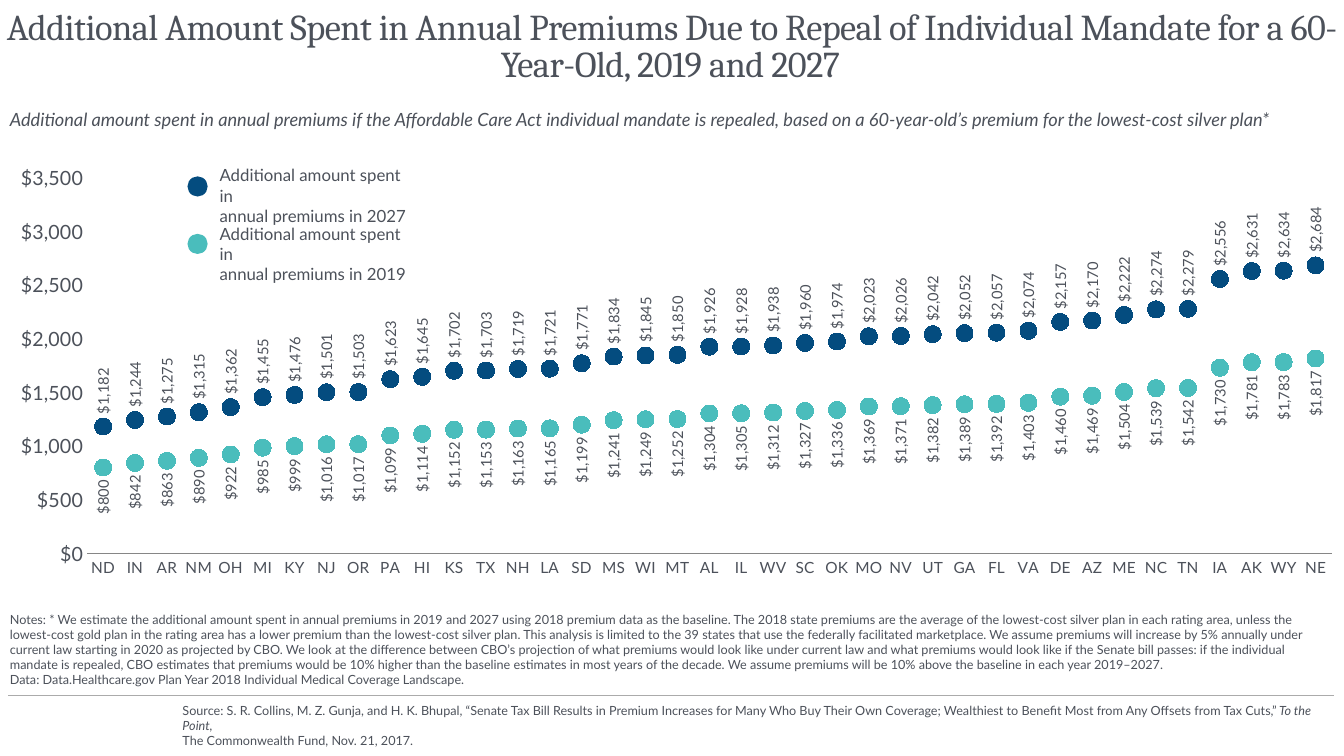
from lxml import etree
from pptx import Presentation
from pptx.chart.data import CategoryChartData
from pptx.dml.color import RGBColor
from pptx.enum.chart import XL_CHART_TYPE, XL_LABEL_POSITION, XL_MARKER_STYLE, XL_TICK_MARK
from pptx.enum.shapes import MSO_CONNECTOR, MSO_SHAPE
from pptx.enum.text import MSO_ANCHOR, MSO_AUTO_SIZE, PP_ALIGN
from pptx.oxml import parse_xml
from pptx.oxml.ns import nsdecls, qn
from pptx.util import Inches, Pt

INK = RGBColor(0x4C, 0x51, 0x5A)
NAVY = RGBColor(0x04, 0x4C, 0x7F)
TEAL = RGBColor(0x4A, 0xBD, 0xBC)
RULE = RGBColor(0xAB, 0xAB, 0xAB)
AXIS = RGBColor(0x86, 0x86, 0x86)
DOLLARS = '"$"#,##0'

STATES = (
    "ND IN AR NM OH MI KY NJ OR PA HI KS TX NH LA SD MS WI MT AL "
    "IL WV SC OK MO NV UT GA FL VA DE AZ ME NC TN IA AK WY NE"
).split()
SPENT_2019 = [
    800, 842, 863, 890, 922, 985, 999, 1016, 1017, 1099, 1114, 1152, 1153,
    1163, 1165, 1199, 1241, 1249, 1252, 1304, 1305, 1312, 1327, 1336, 1369, 1371,
    1382, 1389, 1392, 1403, 1460, 1469, 1504, 1539, 1542, 1730, 1781, 1783, 1817,
]
SPENT_2027 = [
    1182, 1244, 1275, 1315, 1362, 1455, 1476, 1501, 1503, 1623, 1645, 1702, 1703,
    1719, 1721, 1771, 1834, 1845, 1850, 1926, 1928, 1938, 1960, 1974, 2023, 2026,
    2042, 2052, 2057, 2074, 2157, 2170, 2222, 2274, 2279, 2556, 2631, 2634, 2684,
]
NOTES = [
    "Notes: * We estimate the additional amount spent in annual premiums in 2019 and 2027 using 2018 "
    "premium data as the baseline.",
    "The 2018 state premiums are the average of the lowest-cost silver plan in each rating area, unless the "
    "lowest-cost gold plan in the rating area has a lower premium than the lowest-cost silver plan.",
    "This analysis is limited to the 39 states that use the federally facilitated marketplace.",
    "We assume premiums will increase by 5% annually under current law starting in 2020 as projected by CBO.",
    "We look at the difference between CBO’s projection of what premiums would look like under current law "
    "and what premiums would look like if the Senate bill passes: if the individual mandate is repealed, CBO "
    "estimates that premiums would be 10% higher than the baseline estimates in most years of the decade.",
    "We assume premiums will be 10% above the baseline in each year 2019–2027.",
]
DATA_CREDIT = "Data: Data.Healthcare.gov Plan Year 2018 Individual Medical Coverage Landscape."


class PremiumSlide:
    font = "Lato"

    def __init__(self, prs):
        self.s = prs.slides.add_slide(prs.slide_layouts[5])

    def style(self, font, size, name=None, italic=None):
        font.name = name or self.font
        font.size = Pt(size)
        font.color.rgb = INK
        font.bold = False
        font.italic = italic

    def no_insets(self, tf):
        tf.margin_left = tf.margin_right = tf.margin_top = tf.margin_bottom = 0

    def title(self, text, x, y, w, h):
        sp = self.s.shapes.title
        sp.left, sp.top, sp.width, sp.height = (Inches(v) for v in (x, y, w, h))
        tf = sp.text_frame
        tf.text = text
        tf.word_wrap = True
        tf.auto_size = MSO_AUTO_SIZE.NONE
        tf.vertical_anchor = MSO_ANCHOR.TOP
        self.no_insets(tf)
        p = tf.paragraphs[0]
        p.alignment = PP_ALIGN.CENTER
        p.line_spacing = 0.86
        p.space_before = Pt(0)
        r = p.runs[0]
        self.style(r.font, 26, "Cambria")
        r.font._element.set("spc", "-40")

    def text(self, text, x, y, w, h, size, italic=None, anchor=MSO_ANCHOR.TOP):
        sp = self.s.shapes.add_textbox(Inches(x), Inches(y), Inches(w), Inches(h))
        tf = sp.text_frame
        tf.text = text
        tf.word_wrap = True
        tf.vertical_anchor = anchor
        for p in tf.paragraphs:
            for r in p.runs:
                self.style(r.font, size, italic=italic)
        return tf

    def source(self, citation, journal, publisher, x, y, w, h):
        tf = self.text(citation, x, y, w, h, 9, anchor=MSO_ANCHOR.BOTTOM)
        self.no_insets(tf)
        p = tf.paragraphs[0]
        r = p.add_run()
        r.text = journal
        self.style(r.font, 9, italic=True)
        p.add_line_break()
        r = p.add_run()
        r.text = publisher
        self.style(r.font, 9)

    def dot(self, color, x, y, size):
        sp = self.s.shapes.add_shape(MSO_SHAPE.OVAL, Inches(x), Inches(y), Inches(size), Inches(size))
        sp.shadow.inherit = False
        sp.fill.solid()
        sp.fill.fore_color.rgb = color
        sp.line.fill.background()

    def rule(self, x1, x2, y):
        line = self.s.shapes.add_connector(MSO_CONNECTOR.STRAIGHT, Inches(x1), Inches(y), Inches(x2), Inches(y))
        line.line.color.rgb = RULE
        line.line.width = Pt(0.75)
        etree.SubElement(line._element.spPr, qn("a:effectLst"))

    def chart(self, categories, series, x, y, w, h):
        data = CategoryChartData(number_format=DOLLARS)
        data.categories = categories
        for name, values, color, position in series:
            data.add_series(name, values)
        chart = self.s.shapes.add_chart(
            XL_CHART_TYPE.LINE_MARKERS, Inches(x), Inches(y), Inches(w), Inches(h), data).chart
        chart.has_legend = False
        chart.has_title = False
        self.style(chart.font, 18, "Cabin")
        for axis, size in ((chart.category_axis, 11), (chart.value_axis, 14)):
            axis.major_tick_mark = axis.minor_tick_mark = XL_TICK_MARK.NONE
            axis.has_major_gridlines = False
            self.style(axis.tick_labels.font, size)
        chart.category_axis.format.line.color.rgb = AXIS
        chart.category_axis.format.line.width = Pt(0.75)
        axis = chart.value_axis
        axis.format.line.fill.background()
        axis.minimum_scale, axis.maximum_scale, axis.major_unit = 0, 3500, 500
        axis.tick_labels.number_format = DOLLARS
        axis.tick_labels.number_format_is_linked = False
        plot = chart.plots[0]
        plot.vary_by_categories = False
        for line, (name, values, color, position) in zip(plot.series, series):
            self.markers(line, color, position)
        self.plot_area(chart, x=0.065, y=0.041, w=0.928, h=0.879)

    def markers(self, line, color, position):
        line.smooth = False
        line.format.line.fill.background()
        line.marker.style = XL_MARKER_STYLE.CIRCLE
        line.marker.size = 12
        line.marker.format.fill.solid()
        line.marker.format.fill.fore_color.rgb = color
        line.marker.format.line.fill.background()
        labels = line.data_labels
        labels.show_value = True
        labels.position = position
        labels.number_format = DOLLARS
        labels.number_format_is_linked = False
        self.style(labels.font, 10.5)
        body = labels._element.find(qn("c:txPr")).find(qn("a:bodyPr"))
        body.set("rot", "-5400000")
        body.set("vert", "horz")

    def plot_area(self, chart, **box):
        area = chart._chartSpace.chart.plotArea
        for old in area.findall(qn("c:layout")):
            area.remove(old)
        modes = "".join(f'<c:{k}Mode val="edge"/>' for k in "xy")
        sizes = "".join(f'<c:{k} val="{v}"/>' for k, v in box.items())
        area.insert(0, parse_xml(
            f'<c:layout {nsdecls("c")}><c:manualLayout><c:layoutTarget val="inner"/>'
            f'{modes}{sizes}</c:manualLayout></c:layout>'))


def main():
    prs = Presentation()
    prs.slide_width, prs.slide_height = Inches(13.33), Inches(7.5)
    s = PremiumSlide(prs)
    s.source(
        "Source: S. R. Collins, M. Z. Gunja, and H. K. Bhupal, “Senate Tax Bill Results in Premium Increases "
        "for Many Who Buy Their Own Coverage; Wealthiest to Benefit Most from Any Offsets from Tax Cuts,” ",
        "To the Point, ", "The Commonwealth Fund, Nov. 21, 2017.", 1.81, 6.97, 11.52, 0.45)
    s.rule(0.08, 13.23, 6.9)
    s.chart(STATES, [
        ("2019", SPENT_2019, TEAL, XL_LABEL_POSITION.BELOW),
        ("2027", SPENT_2027, NAVY, XL_LABEL_POSITION.ABOVE),
    ], 0, 1.59, 13.3, 4.24)
    s.title("Additional Amount Spent in Annual Premiums Due to Repeal of Individual Mandate "
            "for a 60-Year-Old, 2019 and 2027", 0, 0.1, 13.3, 1)
    s.text("Additional amount spent in annual premiums if the Affordable Care Act individual mandate is repealed, "
           "based on a 60-year-old’s premium for the lowest-cost silver plan*", 0, 1.03, 13.3, 0.32, 13, italic=True)
    for year, color, dot_y, label_y in ((2027, NAVY, 1.75, 1.59), (2019, TEAL, 2.32, 2.17)):
        s.dot(color, 1.86, dot_y, 0.2)
        s.text(f"Additional amount spent in \vannual premiums in {year}", 2.08, label_y, 2.1, 0.5, 12)
    s.text(" ".join(NOTES) + "\n" + DATA_CREDIT, 0, 6.01, 13.3, 0.86, 9, anchor=MSO_ANCHOR.BOTTOM)
    prs.save("out.pptx")


if __name__ == "__main__":
    main()
